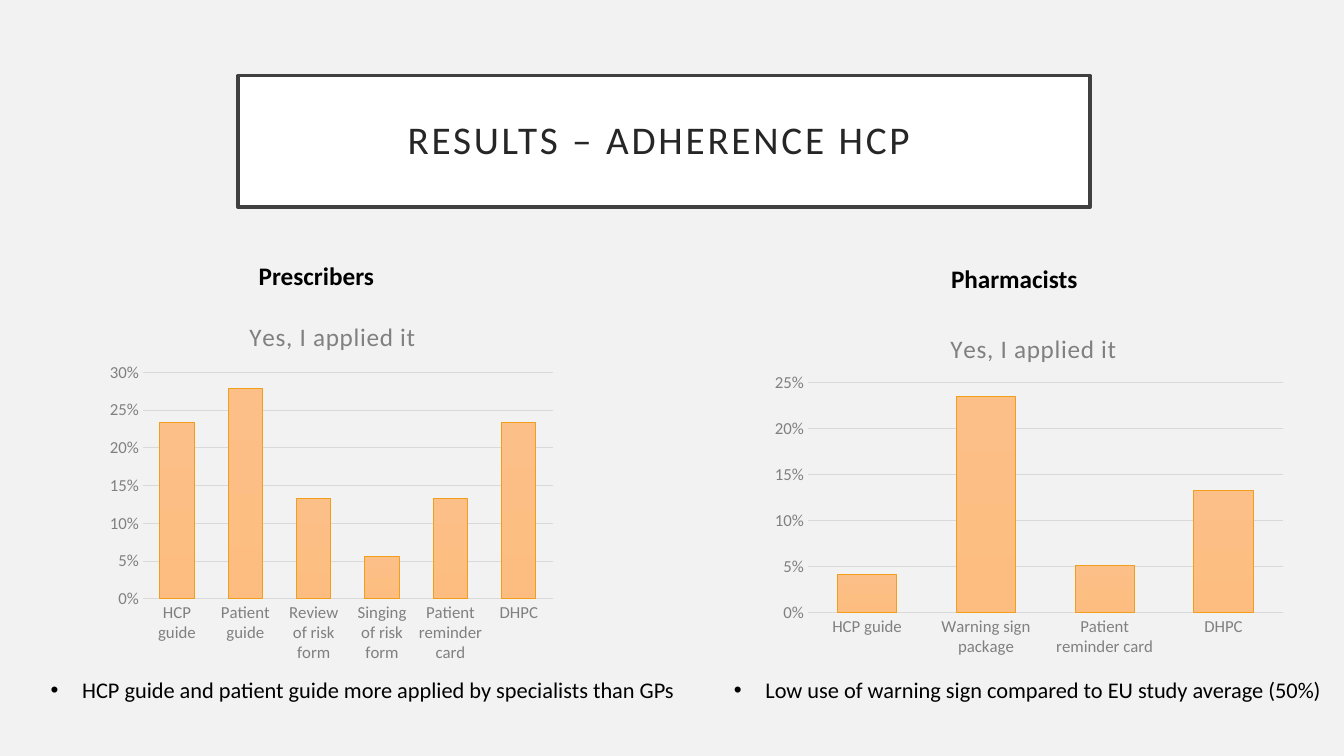
import pptx
import pptx.util
import pptx.chart.data
import pptx.dml.color
import pptx.enum.chart
import pptx.enum.text
import pptx.oxml
import pptx.oxml.ns

Pt = pptx.util.Pt
qn = pptx.oxml.ns.qn
ANCHOR = pptx.enum.text.MSO_ANCHOR
ALIGN = pptx.enum.text.PP_ALIGN

HEADLINE = "RESULTS – ADHERENCE HCP"
CHART_TITLE = "Yes, I applied it"
GROUPS = [
    {
        "heading": "Prescribers", "heading_box": (168, 160, 116, 51),
        "finding": "HCP guide and patient guide more applied by specialists than GPs",
        "finding_box": (29, 479.5, 468, 27),
        "rates": {"HCP guide": 0.233, "Patient guide": 0.278, "Review of risk form": 0.133,
                  "Singing of risk form": 0.056, "Patient reminder card": 0.133, "DHPC": 0.233},
        "top_rate": 0.3, "chart_box": (72, 210, 330, 269),
        "plot_box": (102, 266, 293, 162), "title_at": (175, 225),
    },
    {
        "heading": "Pharmacists", "heading_box": (665, 162, 119, 51),
        "finding": "Low use of warning sign compared to EU study average (50%)",
        "finding_box": (517, 479.5, 443, 27),
        "rates": {"HCP guide": 0.041, "Warning sign package": 0.235,
                  "Patient reminder card": 0.051, "DHPC": 0.133},
        "top_rate": 0.25, "chart_box": (546, 217.5, 378, 256),
        "plot_box": (577, 273, 339.5, 164.5), "title_at": (675.5, 233),
    },
]
THEME = {
    "font": "Calibri", "background": "F2F2F2", "panel": "FFFFFF", "frame": "404040",
    "headline": "262626", "text": "000000", "muted": "808080", "grid": "D9D9D9",
    "bar": ("FCBF87", "FDBD80"), "bar_edge": "F19E1C",
    "headline_size": 28, "heading_size": 18, "finding_size": 16, "axis_size": 12,
}


def color(name):
    return pptx.dml.color.RGBColor.from_string(THEME.get(name, name))


def style_font(font, size, tone, bold=False):
    font.name, font.size, font.bold = THEME["font"], Pt(THEME[size]), bold
    font.color.rgb = color(tone)


def style_line(line, tone, width=0.75):
    line.color.rgb = color(tone)
    line.width = Pt(width)


def fill_placeholder(holder, box, text, anchor, align):
    holder.left, holder.top, holder.width, holder.height = map(Pt, box)
    frame = holder.text_frame
    frame.text = text
    frame.word_wrap = True
    frame.auto_size = pptx.enum.text.MSO_AUTO_SIZE.NONE
    frame.vertical_anchor = anchor
    paragraph = frame.paragraphs[0]
    paragraph.alignment = align
    paragraph.space_before = Pt(0)
    return paragraph


def set_layout(parent, index, **fields):
    for previous in parent.findall(qn("c:layout")):
        parent.remove(previous)
    inner = "".join(f'<c:{tag} val="{value}"/>' for tag, value in fields.items())
    parent.insert(index, pptx.oxml.parse_xml(
        f'<c:layout {pptx.oxml.ns.nsdecls("c")}><c:manualLayout>{inner}'
        '</c:manualLayout></c:layout>'))


def add_rate_chart(slide, group):
    data = pptx.chart.data.CategoryChartData(number_format="0%")
    data.categories = list(group["rates"])
    data.add_series("Series 1", list(group["rates"].values()))
    left, top, width, height = group["chart_box"]
    chart = slide.shapes.add_chart(
        pptx.enum.chart.XL_CHART_TYPE.COLUMN_CLUSTERED,
        *map(Pt, group["chart_box"]), data).chart
    style_font(chart.font, "axis_size", "muted")
    chart.has_legend = False

    chart.has_title = True
    title = chart.chart_title
    title.text_frame.text = CHART_TITLE
    title_line = title.text_frame.paragraphs[0]
    style_font(title_line.font, "heading_size", "muted")
    title_line.runs[0].font._element.set("spc", "50")
    x, y = group["title_at"]
    set_layout(title._element, 1, xMode="edge", yMode="edge",
               x=round((x - left) / width, 3), y=round((y - top) / height, 3))
    x, y, w, h = group["plot_box"]
    set_layout(chart._chartSpace.chart.plotArea, 0, layoutTarget="inner",
               xMode="edge", yMode="edge",
               x=round((x - left) / width, 3), y=round((y - top) / height, 3),
               w=round(w / width, 3), h=round(h / height, 3))

    rates, items = chart.value_axis, chart.category_axis
    rates.minimum_scale, rates.maximum_scale = 0, group["top_rate"]
    rates.major_unit = 0.05
    rates.tick_labels.number_format = "0%"
    rates.tick_labels.number_format_is_linked = False
    rates.format.line.fill.background()
    style_line(rates.major_gridlines.format.line, "grid")
    style_line(items.format.line, "grid")
    for axis in (rates, items):
        axis.major_tick_mark = pptx.enum.chart.XL_TICK_MARK.NONE
        style_font(axis.tick_labels.font, "axis_size", "muted")

    plot = chart.plots[0]
    plot.gap_width, plot.overlap, plot.vary_by_categories = 100, -24, False
    bars = plot.series[0].format
    bars.fill.gradient()
    bars.fill.gradient_angle = 270
    for stop, tone in zip(bars.fill.gradient_stops, THEME["bar"]):
        stop.color.rgb = color(tone)
    style_line(bars.line, "bar_edge")


def main():
    deck = pptx.Presentation()
    deck.slide_width, deck.slide_height = Pt(960), Pt(540)
    slide = deck.slides.add_slide(deck.slide_layouts.get_by_name("Comparison"))
    slide.background.fill.solid()
    slide.background.fill.fore_color.rgb = color("background")

    title = slide.shapes.title
    headline = fill_placeholder(title, (170, 54, 608.5, 94), HEADLINE,
                                ANCHOR.MIDDLE, ALIGN.CENTER)
    headline.line_spacing = 0.9
    style_font(headline.font, "headline_size", "headline")
    headline.runs[0].font._element.set("spc", "200")
    title.text_frame.margin_left, title.text_frame.margin_right = Pt(14), Pt(21)
    title.fill.solid()
    title.fill.fore_color.rgb = color("panel")
    style_line(title.line, "frame", 2.5)

    holders = [holder for holder in slide.placeholders if holder.placeholder_format.idx in range(1, 5)]
    for group, heading_holder, finding_holder in zip(GROUPS, holders[::2], holders[1::2]):
        heading = fill_placeholder(heading_holder, group["heading_box"], group["heading"],
                                   ANCHOR.BOTTOM, ALIGN.CENTER)
        style_font(heading.font, "heading_size", "text", bold=True)
        finding = fill_placeholder(finding_holder, group["finding_box"], group["finding"],
                                   ANCHOR.TOP, ALIGN.LEFT)
        indent = finding._p.get_or_add_pPr()
        indent.set("marL", str(Pt(22.5)))
        indent.set("indent", str(-Pt(22.5)))
        style_font(finding.font, "finding_size", "text")
        add_rate_chart(slide, group)

    deck.save("out.pptx")


if __name__ == "__main__":
    main()
